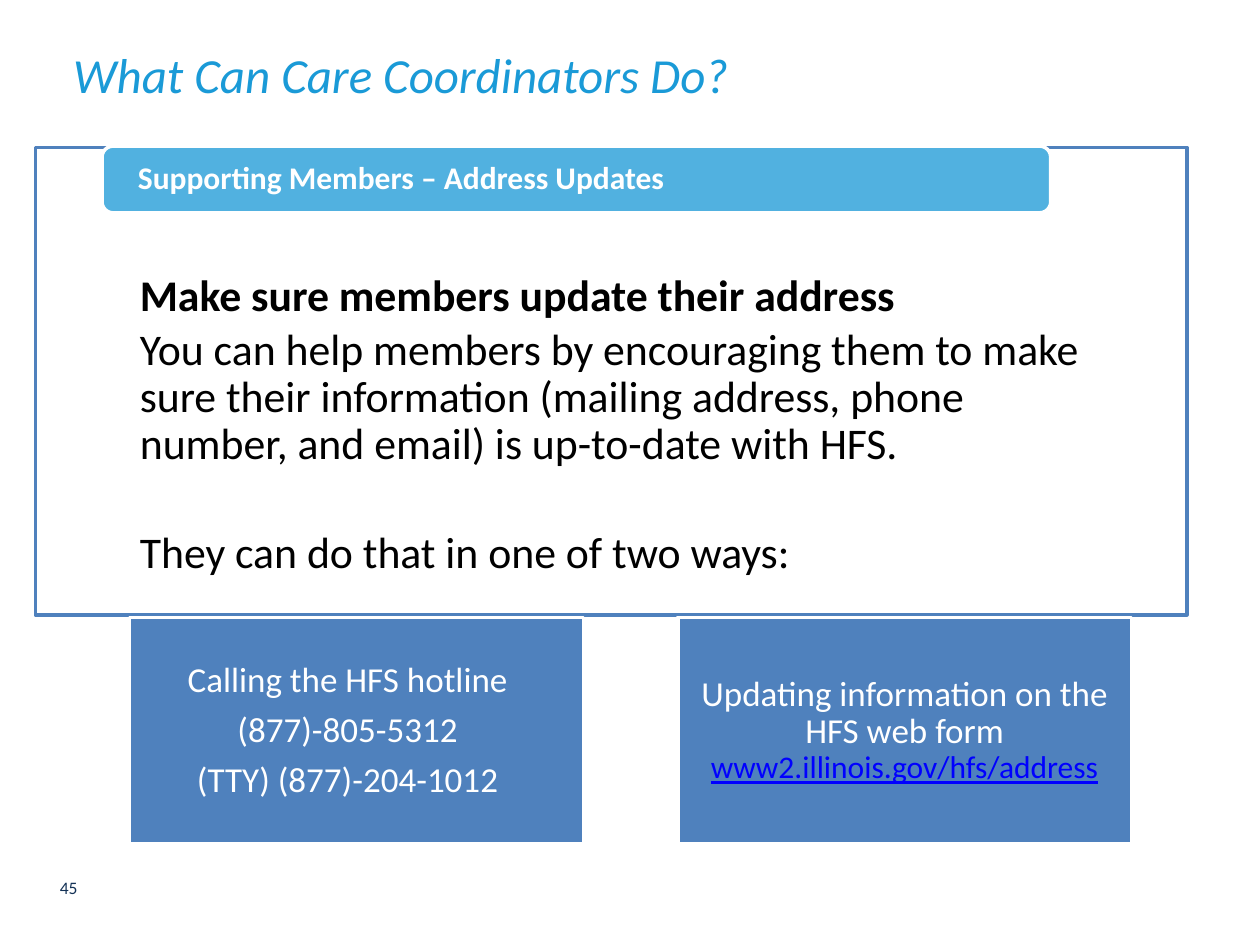
from lxml.etree import SubElement
from pptx import Presentation
from pptx.dml.color import RGBColor
from pptx.enum.shapes import MSO_SHAPE
from pptx.enum.text import MSO_ANCHOR, MSO_AUTO_SIZE, PP_ALIGN
from pptx.oxml.ns import qn
from pptx.util import Inches, Pt

WHITE = RGBColor(0xFF, 0xFF, 0xFF)
BLACK = RGBColor(0x00, 0x00, 0x00)
TITLE_BLUE = RGBColor(0x1A, 0x9A, 0xD7)
SKY = RGBColor(0x51, 0xB1, 0xE0)
STEEL = RGBColor(0x4F, 0x81, 0xBD)
NAVY = RGBColor(0x14, 0x32, 0x56)
LINK_BLUE = RGBColor(0x00, 0x00, 0xFF)


def style_frame(shape, insets, anchor):
    frame = shape.text_frame
    frame.word_wrap = True
    frame.auto_size = MSO_AUTO_SIZE.NONE
    frame.vertical_anchor = anchor
    (frame.margin_left, frame.margin_top,
     frame.margin_right, frame.margin_bottom) = [Inches(i) for i in insets]
    return frame


def style_font(run, size, color, bold=False):
    run.font.name = "Calibri"
    run.font.size = Pt(size)
    run.font.color.rgb = color
    run.font.bold = bold


prs = Presentation()
prs.slide_width, prs.slide_height = Inches(10), Inches(7.5)
slide = prs.slides.add_slide(prs.slide_layouts[1])

title = slide.shapes.title
title.left, title.top = Inches(0.38), Inches(0.3)
title.width, title.height = Inches(8.58), Inches(0.58)
heading = style_frame(title, (0.2, 0, 0.1, 0), MSO_ANCHOR.MIDDLE)
heading.text = "What Can Care Coordinators Do?"
heading.paragraphs[0].alignment = PP_ALIGN.LEFT
style_font(heading.paragraphs[0].runs[0], 28, TITLE_BLUE)
heading.paragraphs[0].runs[0].font.italic = True

advice = slide.placeholders[1]
advice.left, advice.top = Inches(0.28), Inches(1.17)
advice.width, advice.height = Inches(9.14), Inches(3.71)
advice.fill.solid()
advice.fill.fore_color.rgb = WHITE
advice.line.color.rgb = STEEL
advice.line.width = Pt(2)
advice_text = style_frame(advice, (0.71, 1, 0.71, 0.19), MSO_ANCHOR.TOP)
advice_text.text = "\n".join([
    "Make sure members update their address",
    "You can help members by encouraging them to make sure their information "
    "(mailing address, phone number, and email) is up-to-date with HFS.",
    "They can do that in one of two ways:",
])
for paragraph, space_after in zip(advice_text.paragraphs, (4, 35, 0)):
    properties = paragraph._p.get_or_add_pPr()
    properties.set("marL", str(Inches(0.12)))
    properties.set("indent", "0")
    SubElement(properties, qn("a:buNone"))
    paragraph.line_spacing = 0.9
    paragraph.space_before = Pt(0)
    paragraph.space_after = Pt(space_after)
    style_font(paragraph.runs[0], 25, BLACK)
advice_text.paragraphs[0].runs[0].font.bold = True

panels = [
    (MSO_SHAPE.ROUNDED_RECTANGLE, (0.81, 1.16, 7.53, 0.53), SKY,
     (0.26, 0, 0.26, 0), PP_ALIGN.LEFT, 18, True,
     "Supporting Members – Address Updates"),
    (MSO_SHAPE.RECTANGLE, (1.03, 4.9, 3.6, 1.8), STEEL,
     (0.01,) * 4, PP_ALIGN.CENTER, 20, False,
     "Calling the HFS hotline\n(877)-805-5312\n(TTY) (877)-204-1012"),
    (MSO_SHAPE.RECTANGLE, (5.38, 4.9, 3.6, 1.8), STEEL,
     (0.01,) * 4, PP_ALIGN.CENTER, 20, False,
     "Updating information on the HFS web form "),
]
panel_texts = []
for preset, box, color, insets, alignment, size, bold, words in panels:
    panel = slide.shapes.add_shape(preset, *[Inches(v) for v in box])
    panel.shadow.inherit = False
    panel.fill.solid()
    panel.fill.fore_color.rgb = color
    panel.line.color.rgb = WHITE
    panel.line.width = Pt(2)
    panel_text = style_frame(panel, insets, MSO_ANCHOR.MIDDLE)
    panel_text.text = words
    for paragraph in panel_text.paragraphs:
        paragraph.alignment = alignment
        paragraph.line_spacing = 0.9
        paragraph.space_after = Pt(7)
        style_font(paragraph.runs[0], size, WHITE, bold)
    panel_texts.append(panel_text)

banner_text, hotline_text, web_form_text = panel_texts
hotline_text.paragraphs[0]._p.get_or_add_pPr().set("marR", str(Inches(0.14)))
address = web_form_text.paragraphs[0].add_run()
address.text = "www2.illinois.gov/hfs/address"
style_font(address, 18, LINK_BLUE)
address.font.underline = True

page_number = slide.shapes.add_textbox(
    Inches(0.28), Inches(6.92), Inches(0.53), Inches(0.24))
page_text = style_frame(page_number, (0.1, 0.05, 0.1, 0.05), MSO_ANCHOR.MIDDLE)
page_text.text = "45"
page_text.paragraphs[0].alignment = PP_ALIGN.CENTER
style_font(page_text.paragraphs[0].runs[0], 10, NAVY)

prs.save("out.pptx")
